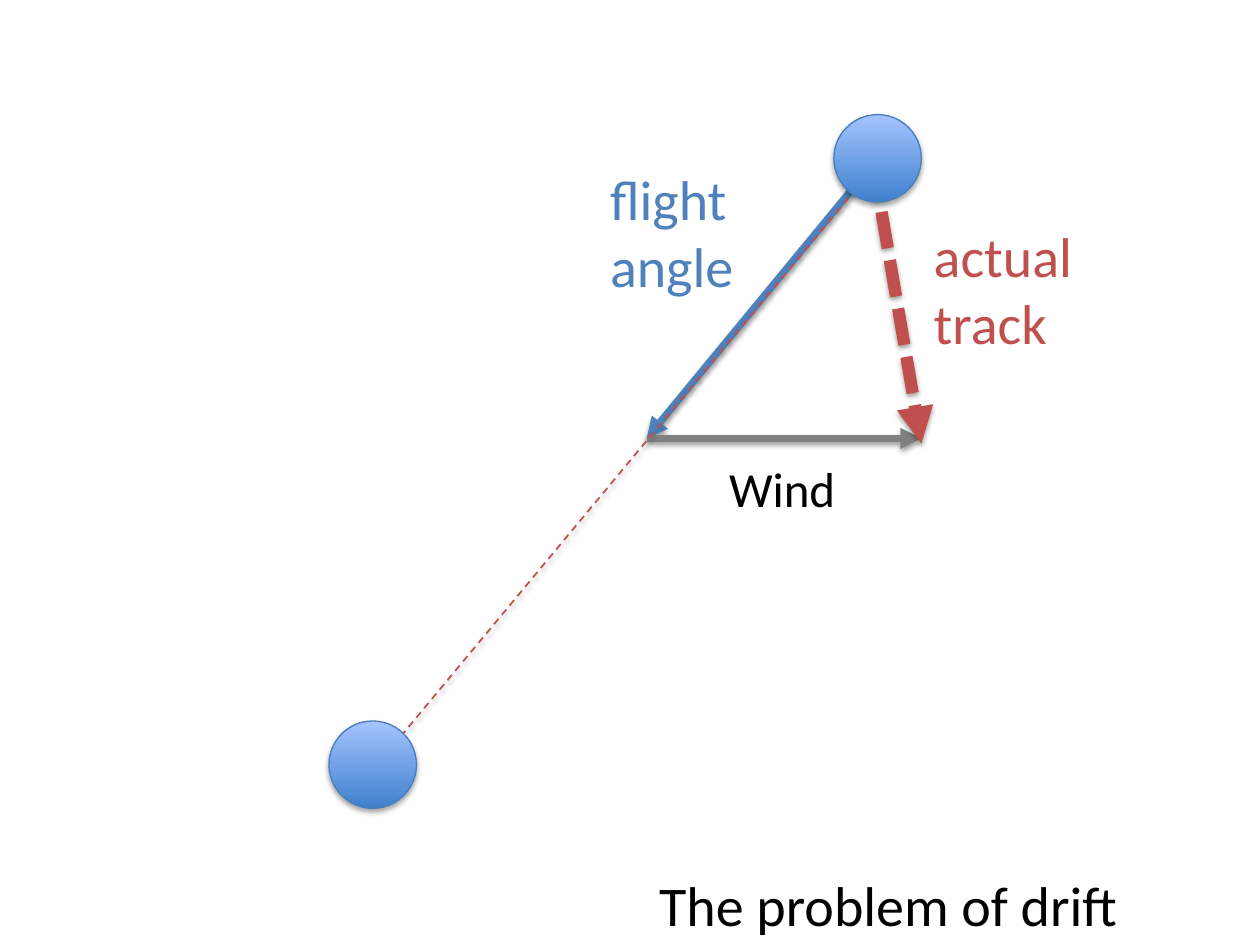
from lxml import etree
from pptx import Presentation
from pptx.dml.color import RGBColor
from pptx.enum.dml import MSO_LINE
from pptx.enum.shapes import MSO_CONNECTOR, MSO_SHAPE
from pptx.enum.text import MSO_ANCHOR, MSO_AUTO_SIZE, PP_ALIGN
from pptx.oxml.ns import qn
from pptx.util import Pt

# Content: lengths in points
BLUE, RED, GRAY, BLACK = "4F81BD", "C0504D", "808080", "000000"
TITLE = ("The problem of drift", (369.5, 494, 278.5, 46))
LABELS = [  # lines, box, size, colour
    (["Wind"], (409.5, 258.5, 75.5, 41), 28, BLACK),
    (["flight", "angle"], (341.5, 90.5, 87, 85), 32, BLUE),
    (["actual", "track"], (526.5, 123, 94.5, 85), 32, RED),
]
CORNER = (369.5, 250.5)
LINES = [  # from, to, colour, width, dash, arrow
    ((501, 91), CORNER, BLUE, 4, None, True),
    (CORNER, (526.5, 250.5), GRAY, 4, None, True),
    ((499, 93.5), (526.5, 253.5), RED, 7, MSO_LINE.SQUARE_DOT, True),
    ((502.5, 92), (230.5, 419), RED, 1, MSO_LINE.DASH, False),
]
PLACES = [(188, 412), (476.5, 65.5)]
DIAMETER = 50


def rgb(color):
    return RGBColor.from_string(color)


def add_shadow(shape, distance, opacity):
    spPr = shape._element.spPr
    effects = etree.SubElement(spPr, qn("a:effectLst"))
    shadow = etree.SubElement(effects, qn("a:outerShdw"), blurRad=str(Pt(3.1)),
                              dist=str(Pt(distance)), dir="5400000", rotWithShape="0")
    color = etree.SubElement(shadow, qn("a:srgbClr"), val=BLACK)
    etree.SubElement(color, qn("a:alpha"), val=str(opacity * 1000))


def write(shape, lines, *, size, color):
    tf = shape.text_frame
    tf.word_wrap = False
    tf.auto_size = MSO_AUTO_SIZE.SHAPE_TO_FIT_TEXT
    tf.vertical_anchor = MSO_ANCHOR.TOP
    for i, line in enumerate(lines):
        p = tf.add_paragraph() if i else tf.paragraphs[0]
        p.alignment = PP_ALIGN.LEFT
        r = p.add_run()
        r.text = line
        r.font.name, r.font.size = "Calibri", Pt(size)
        r.font.color.rgb = rgb(color)


def add_line(s, start, end, color, width, dash, arrow):
    line = s.shapes.add_connector(MSO_CONNECTOR.STRAIGHT, *map(Pt, start + end))
    line.line.color.rgb = rgb(color)
    line.line.width = Pt(width)
    if dash:
        line.line.dash_style = dash
    if arrow:
        ln = line._element.spPr.find(qn("a:ln"))
        etree.SubElement(ln, qn("a:tailEnd"), type="triangle")
    add_shadow(line, 1.6, 38)


def add_place(s, left, top):
    sp = s.shapes.add_shape(MSO_SHAPE.OVAL, *map(Pt, (left, top, DIAMETER, DIAMETER)))
    sp.fill.gradient()
    sp.fill.gradient_angle = 90
    for stop, color in zip(sp.fill.gradient_stops, ("3F80CE", "A4C4FF")):
        stop.color.rgb = rgb(color)
    sp.line.color.rgb = rgb("4B7EBC")
    sp.line.width = Pt(0.75)
    add_shadow(sp, 1.8, 35)


prs = Presentation()
prs.slide_width, prs.slide_height = Pt(720), Pt(540)
s = prs.slides.add_slide(prs.slide_layouts[5])

# Title
text, box = TITLE
title = s.shapes.title
title.left, title.top, title.width, title.height = map(Pt, box)
write(title, [text], size=32, color=BLACK)

# Wind triangle and direct route, then the places on top
for line in LINES:
    add_line(s, *line)
for place in PLACES:
    add_place(s, *place)

# Labels
for lines, box, size, color in LABELS:
    write(s.shapes.add_textbox(*map(Pt, box)), lines, size=size, color=color)

prs.save("out.pptx")
